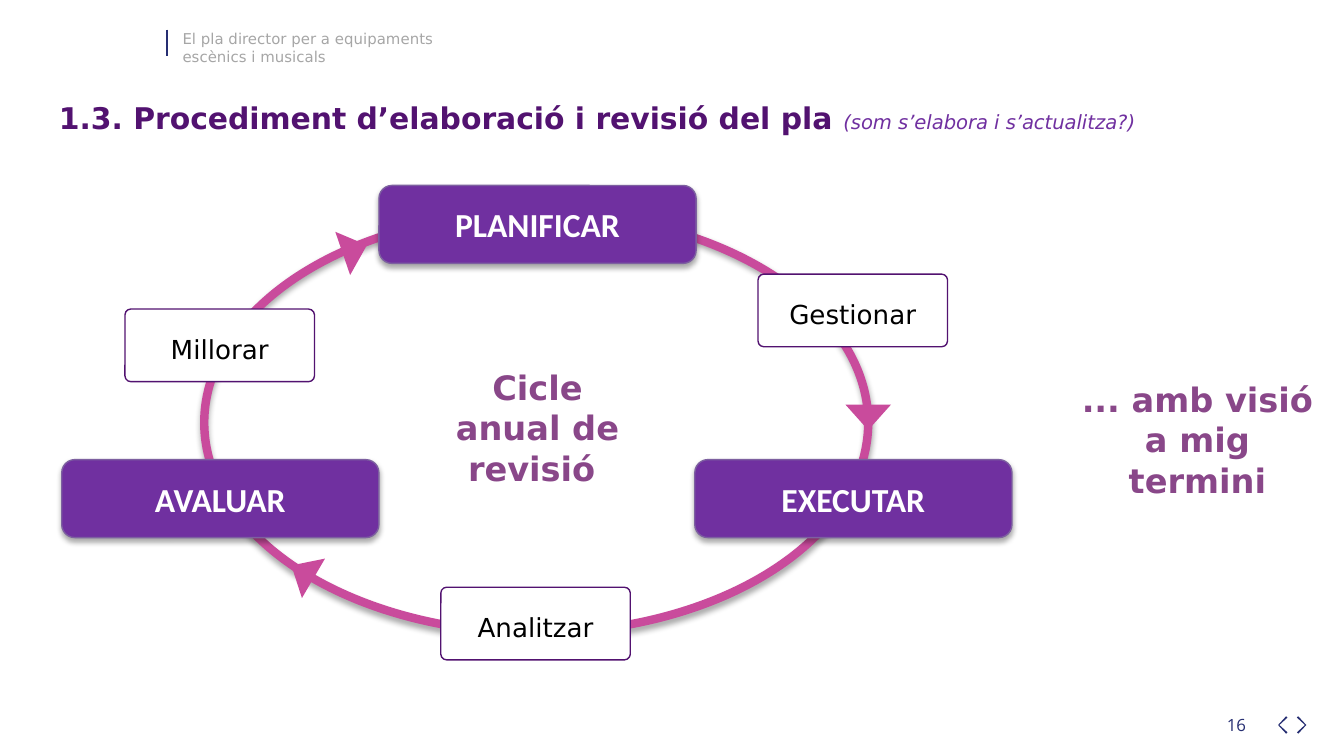
from dataclasses import dataclass

from lxml.etree import SubElement
from pptx import Presentation
from pptx.dml.color import RGBColor
from pptx.enum.shapes import MSO_CONNECTOR, MSO_SHAPE
from pptx.enum.text import MSO_ANCHOR, PP_ALIGN
from pptx.oxml.ns import qn
from pptx.shapes.autoshape import Shape
from pptx.shapes.shapetree import SlideShapes
from pptx.text.text import _Paragraph as Paragraph
from pptx.util import Inches, Pt

NAVY = RGBColor(0x26, 0x2E, 0x72)
GREY = RGBColor(0xA6, 0xA6, 0xA6)
PINK = RGBColor(0xC9, 0x4B, 0x9C)
DEEP_PURPLE = RGBColor(0x52, 0x12, 0x70)
PURPLE = RGBColor(0x70, 0x30, 0xA0)
PHASE_EDGE = RGBColor(0x7D, 0x60, 0xA0)
PLUM = RGBColor(0x89, 0x47, 0x89)
WHITE = RGBColor(0xFF, 0xFF, 0xFF)
BLACK = RGBColor(0x00, 0x00, 0x00)

BODY_FONT = "DejaVu Sans"


@dataclass(frozen=True)
class Style:
    size: float
    color: RGBColor
    font: str = BODY_FONT
    bold: bool = False
    italic: bool = False


@dataclass(frozen=True)
class Step:
    label: str
    left: float
    top: float


@dataclass(frozen=True)
class Arrowhead:
    left: float
    top: float
    rotation: float


HEADER = Style(8, GREY)
PAGE_NUMBER = Style(9, NAVY, "Open Sans")
TITLE = Style(16, DEEP_PURPLE, bold=True)
SUBTITLE = Style(10.5, PURPLE, italic=True)
PHASE = Style(18, WHITE, "Calibri", bold=True)
ACTION = Style(14, BLACK)
MESSAGE = Style(18, PLUM, bold=True)

PHASES = [
    Step("PLANIFICAR", 2.82, 1.38),
    Step("EXECUTAR", 5.17, 3.42),
    Step("AVALUAR", 0.46, 3.42),
]
ACTIONS = [
    Step("Gestionar", 5.64, 2.04),
    Step("Millorar", 0.93, 2.3),
    Step("Analitzar", 3.28, 4.37),
]
ARROWHEADS = [
    Arrowhead(6.29, 3.01, 180),
    Arrowhead(2.08, 4.16, 300.3),
    Arrowhead(2.47, 1.76, 71.1),
]


def add_run(paragraph: Paragraph, text: str, style: Style) -> None:
    run = paragraph.add_run()
    run.text = text
    run.font.name = style.font
    run.font.size = Pt(style.size)
    run.font.bold = style.bold
    run.font.italic = style.italic
    run.font.color.rgb = style.color


def add_text(shapes: SlideShapes, left: float, top: float, width: float, height: float,
             lines: list[list[tuple[str, Style]]], align: PP_ALIGN = PP_ALIGN.LEFT) -> None:
    frame = shapes.add_textbox(Inches(left), Inches(top), Inches(width), Inches(height)).text_frame
    frame.word_wrap = True
    for index, runs in enumerate(lines):
        paragraph = frame.add_paragraph() if index else frame.paragraphs[0]
        paragraph.alignment = align
        for text, style in runs:
            add_run(paragraph, text, style)


def add_plain(shapes: SlideShapes, kind: MSO_SHAPE, left: float, top: float, width: float,
              height: float, fill: RGBColor | None, line: RGBColor | None,
              line_width: float = 0.75) -> Shape:
    shape = shapes.add_shape(kind, Inches(left), Inches(top), Inches(width), Inches(height))
    shape.shadow.inherit = False
    if fill is None:
        shape.fill.background()
    else:
        shape.fill.solid()
        shape.fill.fore_color.rgb = fill
    if line is None:
        shape.line.fill.background()
    else:
        shape.line.color.rgb = line
        shape.line.width = Pt(line_width)
    return shape


def cast_shadow(shape: Shape) -> None:
    effects = shape._element.spPr.find(qn("a:effectLst"))
    shadow = SubElement(effects, qn("a:outerShdw"), blurRad=str(Pt(3.1)), dist=str(Pt(1.8)),
                        dir="5400000", rotWithShape="0")
    color = SubElement(shadow, qn("a:srgbClr"), val="000000")
    SubElement(color, qn("a:alpha"), val="35000")


def add_phase(shapes: SlideShapes, phase: Step) -> None:
    box = add_plain(shapes, MSO_SHAPE.ROUNDED_RECTANGLE, phase.left, phase.top, 2.36, 0.58,
                    PURPLE, PHASE_EDGE)
    cast_shadow(box)
    box.text_frame.vertical_anchor = MSO_ANCHOR.MIDDLE
    paragraph = box.text_frame.paragraphs[0]
    paragraph.alignment = PP_ALIGN.CENTER
    add_run(paragraph, phase.label, PHASE)


def add_action(shapes: SlideShapes, action: Step) -> None:
    box = add_plain(shapes, MSO_SHAPE.ROUNDED_RECTANGLE, action.left, action.top, 1.41, 0.54,
                    WHITE, DEEP_PURPLE)
    box.adjustments[0] = 0.08
    add_text(shapes, action.left, action.top + 0.13, 1.41, 0.34,
             [[(action.label, ACTION)]], PP_ALIGN.CENTER)


def add_chevron(shapes: SlideShapes, tip: float, direction: int) -> None:
    top, height, depth, stroke = 5.33, 0.13, 0.06, 0.01
    middle, bottom = top + height / 2, top + height
    back = tip - direction * depth
    outline = [
        (back, top),
        (tip, middle),
        (back, bottom),
        (back - direction * stroke, bottom - stroke),
        (tip - direction * stroke, middle),
        (back - direction * stroke, top + stroke),
    ]
    points = [(Inches(x), Inches(y)) for x, y in outline]
    builder = shapes.build_freeform(*points[0])
    builder.add_line_segments(points[1:], close=True)
    chevron = builder.convert_to_shape()
    chevron.shadow.inherit = False
    chevron.fill.solid()
    chevron.fill.fore_color.rgb = NAVY
    chevron.line.fill.background()


def add_header(shapes: SlideShapes) -> None:
    add_text(shapes, 1.26, 0.17, 3.01, 0.37, [
        [("El pla director per a equipaments", HEADER)],
        [("escènics i musicals", HEADER)],
    ])
    rule = shapes.add_connector(MSO_CONNECTOR.STRAIGHT, Inches(1.24), Inches(0.22),
                                Inches(1.24), Inches(0.42))
    rule.line.color.rgb = NAVY
    rule.line.width = Pt(1)
    SubElement(rule._element.spPr, qn("a:effectLst"))


def main() -> None:
    deck = Presentation()
    deck.slide_width = Inches(10)
    deck.slide_height = Inches(10 * 9 / 16)
    shapes = deck.slides.add_slide(deck.slide_layouts[6]).shapes

    add_text(shapes, 9.03, 5.27, 0.56, 0.25, [[("16", PAGE_NUMBER)]])
    add_header(shapes)
    add_chevron(shapes, 9.72, 1)
    add_chevron(shapes, 9.51, -1)

    cycle = add_plain(shapes, MSO_SHAPE.OVAL, 1.52, 1.58, 4.94, 3.13, None, PINK, 4.5)
    cast_shadow(cycle)
    add_text(shapes, 0.34, 0.69, 8.92, 0.37, [[
        ("1.3. Procediment d’elaboració i revisió del pla ", TITLE),
        ("(som s’elabora i s’actualitza?)", SUBTITLE),
    ]])
    for phase in PHASES:
        add_phase(shapes, phase)
    for action in ACTIONS:
        add_action(shapes, action)
    add_text(shapes, 3.18, 2.68, 1.64, 1.01,
             [[("Cicle anual de revisió ", MESSAGE)]], PP_ALIGN.CENTER)
    for arrowhead in ARROWHEADS:
        triangle = add_plain(shapes, MSO_SHAPE.ISOSCELES_TRIANGLE, arrowhead.left, arrowhead.top,
                             0.34, 0.19, PINK, None)
        triangle.rotation = arrowhead.rotation
    add_text(shapes, 7.93, 2.77, 1.96, 1.01,
             [[("... amb visió a mig termini", MESSAGE)]], PP_ALIGN.CENTER)

    deck.save("out.pptx")


if __name__ == "__main__":
    main()
